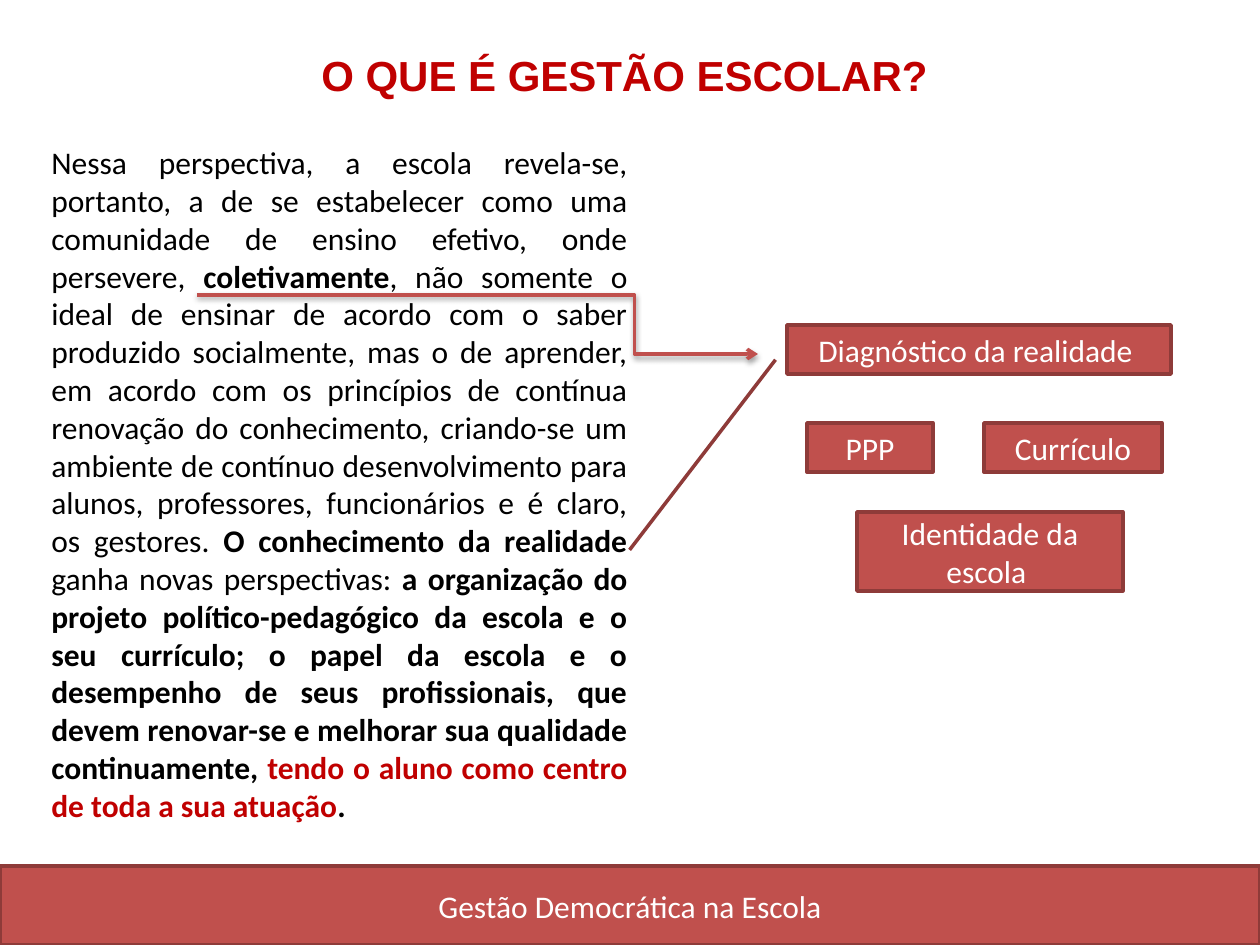
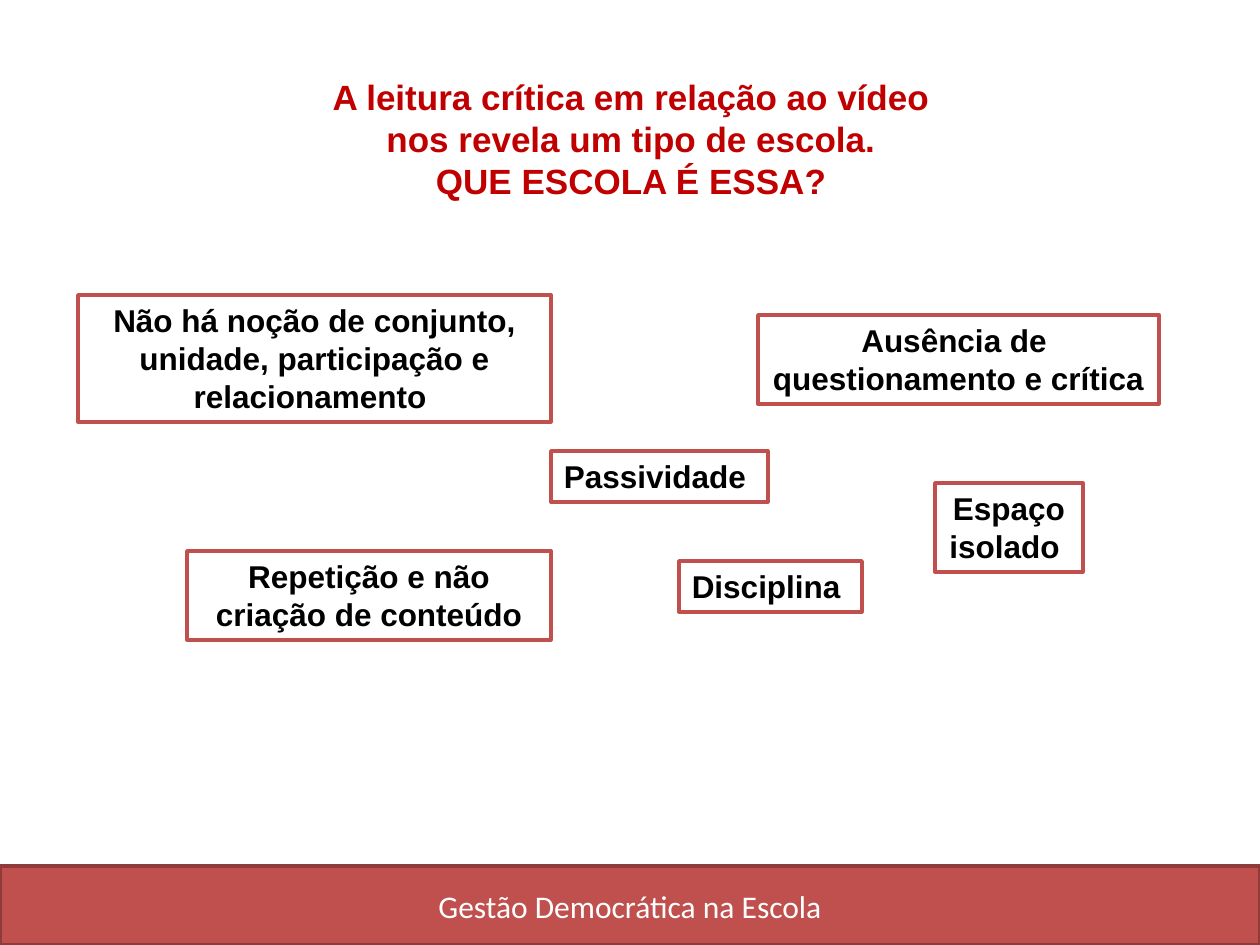
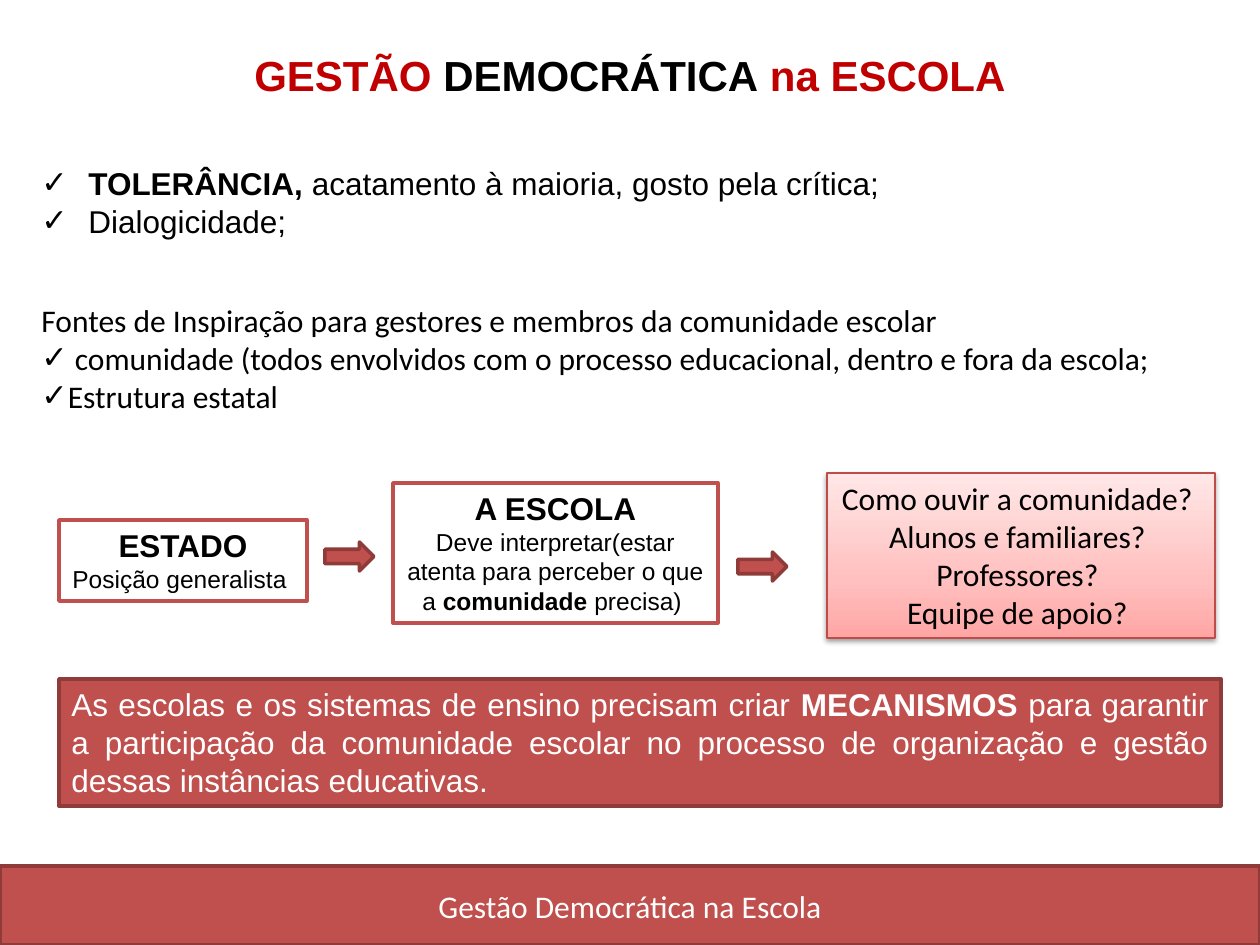
from copy import deepcopy

from lxml.etree import SubElement
from pptx import Presentation
from pptx.dml.color import RGBColor
from pptx.enum.shapes import MSO_CONNECTOR, MSO_SHAPE
from pptx.enum.text import MSO_ANCHOR, MSO_AUTO_SIZE, PP_ALIGN
from pptx.oxml.ns import qn
from pptx.util import Emu, Pt

SCALE = 914400 / 126
WIDE, HIGH = 1260, 945
HUES = {
    "brick": "C0504D", "edge": "8E3B39", "rim": "BF4C48", "red": "C00000",
    "black": "000000", "white": "FFFFFF",
    "rose": "FFA6A5", "pink": "FFC0BF", "blush": "FFE7E7",
}
LEFT, MID, FULL = PP_ALIGN.LEFT, PP_ALIGN.CENTER, PP_ALIGN.JUSTIFY


def px(num):
    return Emu(round(num * SCALE))


def hue(name):
    return RGBColor.from_string(HUES[name])


def add(node, tag, **attrs):
    return SubElement(node, qn(tag), {key: str(val) for key, val in attrs.items()})


# Text: a paragraph is a string or a list of runs; a run is a string or
# a tuple (text, changes), where changes may hold bold, size and color.
def style(font, size=None, name=None, color=None, bold=None):
    if size:
        font.size = Pt(size)
    if name:
        font.name = name
    if color:
        font.color.rgb = hue(color)
    if bold is not None:
        font.bold = bold


def write(frame, paras, align=MID, anchor=MSO_ANCHOR.TOP, wrap=True, **look):
    frame.auto_size = MSO_AUTO_SIZE.NONE
    frame.word_wrap = wrap
    frame.vertical_anchor = anchor
    for num, runs in enumerate(paras):
        para = frame.add_paragraph() if num else frame.paragraphs[0]
        para.alignment = align
        style(para.font, **look)
        for item in [runs] if isinstance(runs, str) else runs:
            text, change = (item, {}) if isinstance(item, str) else item
            run = para.add_run()
            run.text = text
            style(run.font, **change)


def tick(para, indent=0):
    props = para._p.get_or_add_pPr()
    props.set("marL", str(px(indent)))
    props.set("indent", str(-px(indent)))
    font = add(props, "a:buFont", typeface="Arial")
    mark = add(props, "a:buChar", char="✓")
    default = props.find(qn("a:defRPr"))
    default.addprevious(font)
    default.addprevious(mark)


# Shapes
def shade(shape):
    effects = add(shape._element.spPr, "a:effectLst")
    cast = add(effects, "a:outerShdw", blurRad=Pt(3.1), dist=Pt(1.6),
               dir=5400000, rotWithShape=0)
    tint = add(cast, "a:srgbClr", val=HUES["black"])
    add(tint, "a:alpha", val=38000)


def form(slide, box, kind=MSO_SHAPE.RECTANGLE, fill="brick", line="edge", width=2):
    shape = slide.shapes.add_shape(kind, *map(px, box))
    shape.shadow.inherit = False
    shape.fill.solid()
    shape.fill.fore_color.rgb = hue(fill)
    shape.line.color.rgb = hue(line)
    shape.line.width = Pt(width)
    return shape


def label(slide, box, text, kind=MSO_SHAPE.RECTANGLE):
    shape = form(slide, box, kind)
    write(shape.text_frame, [text], anchor=MSO_ANCHOR.MIDDLE,
          size=18, name="Calibri", color="white")
    return shape


def frame(slide, box, paras, wrap=True, bold=None):
    shape = form(slide, box, fill="white", line="brick")
    write(shape.text_frame, paras, wrap=wrap, size=18, name="Arial",
          color="black", bold=bold)


def note(slide, box, paras, align=LEFT, name="Calibri"):
    text = slide.shapes.add_textbox(*map(px, box)).text_frame
    write(text, paras, align, size=18, name=name, color="black")
    return text.paragraphs


def glow(slide, box, paras):
    shape = form(slide, box, line="rim", width=0.75)
    shape.fill.gradient()
    shape.fill.gradient_angle = 90
    first = shape._element.spPr.find(".//" + qn("a:gs"))
    first.addnext(deepcopy(first))
    tones = [(0, "rose"), (0.35, "pink"), (1, "blush")]
    for stop, (spot, tone) in zip(shape.fill.gradient_stops, tones):
        stop.position = spot
        stop.color.rgb = hue(tone)
    props = shape._element.spPr
    props.remove(props.find(qn("a:effectLst")))
    shade(shape)
    write(shape.text_frame, paras, wrap=False, size=18, name="Calibri", color="black")


def elbow(slide, start, end, bend):
    link = slide.shapes.add_connector(MSO_CONNECTOR.ELBOW, *map(px, start + end))
    link.line.color.rgb = hue("brick")
    link.line.width = Pt(2)
    props = link._element.spPr
    add(props.find(".//" + qn("a:avLst")), "a:gd", name="adj1",
        fmla=f"val {round(bend * 100000)}")
    add(props.find(qn("a:ln")), "a:tailEnd", type="arrow")
    shade(link)


# Every slide: title on top, band at the foot
def page(deck, box, paras, size=24):
    slide = deck.slides.add_slide(deck.slide_layouts[5])
    title = slide.shapes.title
    title.left, title.top, title.width, title.height = map(px, box)
    write(title.text_frame, paras, size=size, name="Arial", color="red", bold=True)
    label(slide, (0, 866, WIDE, HIGH - 866), "Gestão Democrática na Escola")
    return slide


def concept(deck):
    slide = page(deck, (286, 43, 689, 63), ["O QUE É GESTÃO ESCOLAR? "])
    bold = {"bold": True}
    note(slide, (39, 137, 601, 699), [[
        "Nessa perspectiva, a escola revela-se, portanto, a de se estabelecer como "
        "uma comunidade de ensino efetivo, onde persevere, ",
        ("coletivamente", bold),
        ", não somente o ideal de ensinar de acordo com o saber produzido "
        "socialmente, mas o de aprender, em acordo com os princípios de contínua "
        "renovação do conhecimento, criando-se um ambiente de contínuo "
        "desenvolvimento para alunos, professores, funcionários e é claro, os "
        "gestores. ",
        ("O conhecimento da realidade", bold),
        " ganha novas perspectivas: ",
        ("a organização do projeto político-pedagógico da escola e o seu currículo; "
         "o papel da escola e o desempenho de seus profissionais, que devem "
         "renovar-se e melhorar sua qualidade continuamente, ", bold),
        ("tendo o aluno como centro de toda a sua atuação",
         {"bold": True, "color": "red"}),
        (". ", bold),
    ]], FULL)
    callout = label(slide, (787, 325, 384, 49), "Diagnóstico da realidade ",
                    MSO_SHAPE.LINE_CALLOUT_1)
    for num, value in enumerate((0.71, -0.03, 4.59, -0.41)):
        callout.adjustments[num] = value
    label(slide, (807, 423, 126, 49), "PPP")
    label(slide, (984, 423, 178, 49), "Currículo")
    label(slide, (857, 512, 266, 79), "Identidade da escola ")
    elbow(slide, (197, 295), (758, 354), 0.78)


def reading(deck):
    slide = page(deck, (129, 69, 1014, 140), [
        "A leitura crítica em relação ao vídeo ",
        "nos revela um tipo de escola. ",
        "QUE ESCOLA É ESSA? ",
    ], 20)
    traits = [
        ((551, 451, 217, 51), ["Passividade "], False),
        ((679, 561, 183, 51), ["Disciplina "], False),
        ((758, 315, 401, 89), ["Ausência de ", "questionamento e crítica"], False),
        ((187, 551, 364, 89), ["Repetição e não criação de conteúdo"], True),
        ((78, 295, 473, 127),
         ["Não há noção de conjunto, unidade, participação e relacionamento "], True),
        ((935, 483, 148, 89), ["Espaço isolado "], True),
    ]
    for box, paras, wrap in traits:
        frame(slide, box, paras, wrap, True)


def sharing(deck):
    slide = page(deck, (236, 43, 788, 63), [
        ["GESTÃO ", ("DEMOCRÁTICA", {"color": "black"}), " na ESCOLA"]])
    bold, head, small = {"bold": True}, {"bold": True}, {"size": 14}

    # Lists
    values = note(slide, (29, 158, 1201, 89), [
        [("TOLERÂNCIA, ", bold), "acatamento à maioria, gosto pela crítica;"],
        "Dialogicidade;",
    ], FULL, "Arial")
    for para in values:
        tick(para, 47)
    sources = note(slide, (29, 295, 1191, 127), [
        "Fontes de Inspiração para gestores e membros da comunidade escolar",
        " comunidade (todos envolvidos com o processo educacional, dentro e fora "
        "da escola;",
        "Estrutura estatal",
    ])
    for para in sources[1:]:
        tick(para)

    # Flow from state to school to community
    frame(slide, (59, 520, 248, 81), [
        [("ESTADO", head)], [("Posição generalista ", small)]], False)
    frame(slide, (393, 483, 325, 140), [
        [("A ESCOLA", head)],
        [("Deve interpretar(estar atenta para perceber o que a ", small),
         ("comunidade", {"bold": True, "size": 14}), (" precisa) ", small)],
    ])
    for left, top in ((325, 542), (738, 552)):
        form(slide, (left, top, 49, 29), MSO_SHAPE.RIGHT_ARROW)
    glow(slide, (827, 473, 388, 165), [
        "Como ouvir a comunidade? ", "Alunos e familiares? ",
        "Professores? ", "Equipe de apoio? "])

    # Closing statement
    close = form(slide, (59, 679, 1162, 127))
    write(close.text_frame, [[
        "As escolas e os sistemas de ensino precisam criar ",
        ("MECANISMOS", bold),
        " para garantir a participação da comunidade escolar no processo de "
        "organização e gestão dessas instâncias educativas.",
    ]], FULL, size=18, name="Arial", color="white")


def main():
    deck = Presentation()
    deck.slide_width, deck.slide_height = px(WIDE), px(HIGH)
    concept(deck)
    reading(deck)
    sharing(deck)
    deck.save("out.pptx")


if __name__ == "__main__":
    main()
